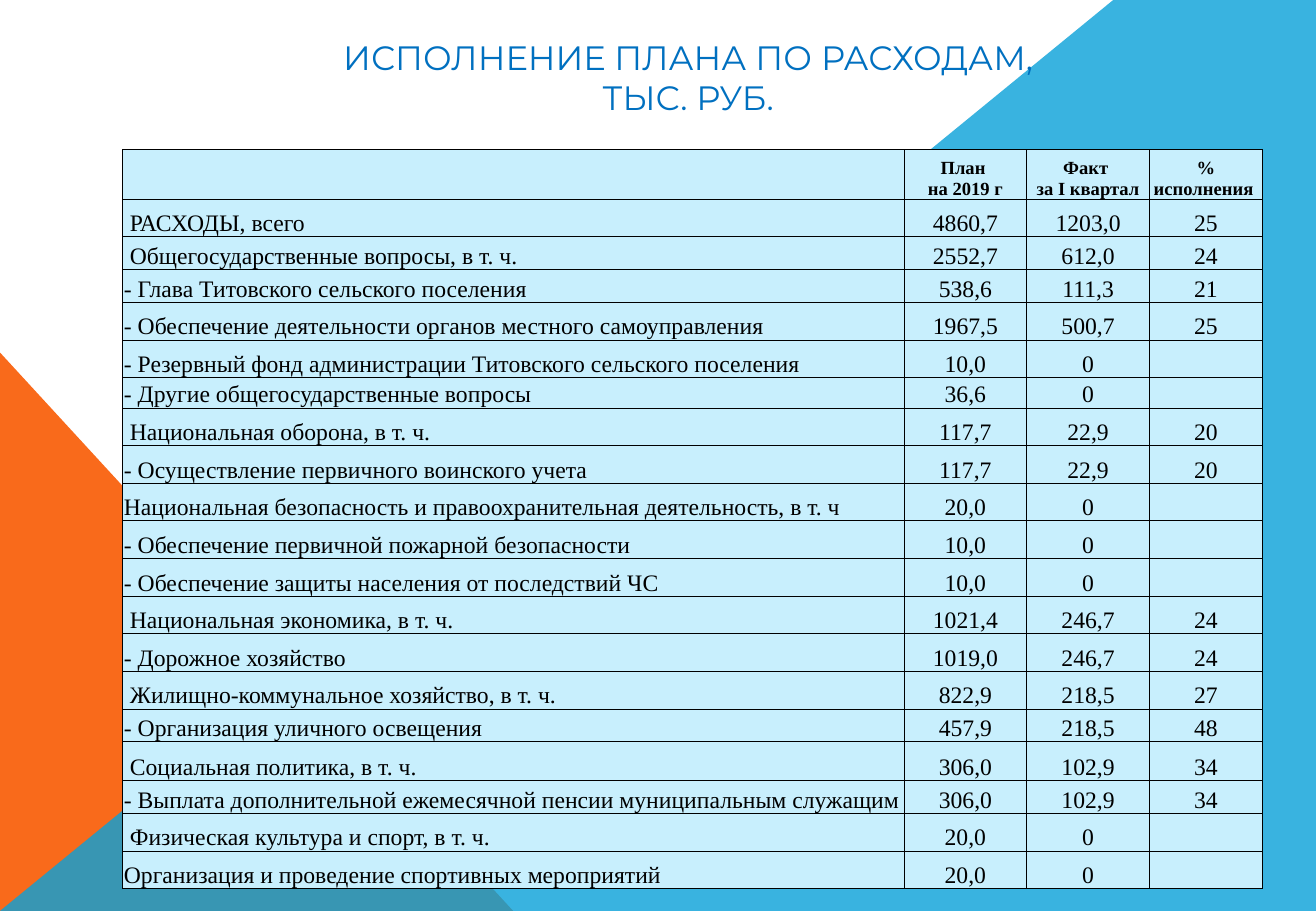
import pptx
import pptx.util
import pptx.dml.color
import pptx.enum.shapes
import pptx.enum.text
import pptx.oxml
import pptx.oxml.ns
from lxml import etree

PAGE_WIDTH, PAGE_HEIGHT = 10.83, 7.5
COLORS = {
    "orange": "F96A1B", "blue": "08A1D9", "title": "0070C0",
    "cell": "C8EFFD", "ink": "000000",
}
COLUMN_WIDTHS = [6.43, 1.01, 1.01, 0.93]
DEFAULT_ROW = 0.31
ROW_HEIGHTS = {0: 0.41, 2: 0.27, 3: 0.27, 6: 0.25, 15: 0.27, 16: 0.32, 17: 0.27}
HEADERS = ["", "План \nна 2019 г", "Факт \nза I квартал", "% исполнения "]
EXPENSES = [
    (" РАСХОДЫ, всего", "4860,7", "1203,0", "25"),
    (" Общегосударственные вопросы, в т. ч.", "2552,7", "612,0", "24"),
    ("- Глава Титовского сельского поселения", "538,6", "111,3", "21"),
    ("- Обеспечение деятельности органов местного самоуправления", "1967,5", "500,7", "25"),
    ("- Резервный фонд администрации Титовского сельского поселения", "10,0", "0", ""),
    ("- Другие общегосударственные вопросы", "36,6", "0", ""),
    (" Национальная оборона, в т. ч.", "117,7", "22,9", "20"),
    ("- Осуществление первичного воинского учета", "117,7", "22,9", "20"),
    ("Национальная безопасность и правоохранительная деятельность, в т. ч", "20,0", "0", ""),
    ("- Обеспечение первичной пожарной безопасности", "10,0", "0", ""),
    ("- Обеспечение защиты населения от последствий ЧС", "10,0", "0", ""),
    (" Национальная экономика, в т. ч.", "1021,4", "246,7", "24"),
    ("- Дорожное хозяйство", "1019,0", "246,7", "24"),
    (" Жилищно-коммунальное хозяйство, в т. ч.", "822,9", "218,5", "27"),
    ("- Организация уличного освещения", "457,9", "218,5", "48"),
    (" Социальная политика, в т. ч.", "306,0", "102,9", "34"),
    ("- Выплата дополнительной ежемесячной пенсии муниципальным служащим",
     "306,0", "102,9", "34"),
    (" Физическая культура и спорт, в т. ч.", "20,0", "0", ""),
    ("Организация и проведение спортивных мероприятий", "20,0", "0", ""),
]


def inches(*lengths):
    return [pptx.util.Inches(length) for length in lengths]


def paint(fill, color):
    fill.solid()
    fill.fore_color.rgb = pptx.dml.color.RGBColor.from_string(COLORS[color])


def style_paragraph(para, font_name, size, color, centered, bold=False):
    align = pptx.enum.text.PP_ALIGN
    para.alignment = align.CENTER if centered else align.LEFT
    para.font.name = font_name
    para.font.size = pptx.util.Pt(size)
    para.font.bold = bold
    para.font.color.rgb = pptx.dml.color.RGBColor.from_string(COLORS[color])


def add_background(page, box):
    left, top, width, height = box
    # Orange triangle in the lower left corner
    triangle = page.shapes.add_shape(
        pptx.enum.shapes.MSO_SHAPE.RIGHT_TRIANGLE,
        *inches(left, top + 0.387 * height, 0.39 * width, 0.613 * height))
    # Translucent blue area below the diagonal
    corners = [(0, 1), (0.846, 0), (1, 0), (1, 1)]
    points = [inches(left + x * width, top + y * height) for x, y in corners]
    builder = page.shapes.build_freeform(*points[0])
    builder.add_line_segments(points[1:], close=True)
    diagonal = builder.convert_to_shape()
    for shape, color in ((triangle, "orange"), (diagonal, "blue")):
        shape.shadow.inherit = False
        shape.line.fill.background()
        paint(shape.fill, color)
    tint = diagonal._element.spPr.find(".//" + pptx.oxml.ns.qn("a:srgbClr"))
    etree.SubElement(tint, pptx.oxml.ns.qn("a:alpha"), val="80000")


def add_title(page, box):
    frame = page.shapes.add_textbox(*inches(*box)).text_frame
    frame.word_wrap = True
    frame.vertical_anchor = pptx.enum.text.MSO_ANCHOR.MIDDLE
    frame.text = "ИСПОЛНЕНИЕ ПЛАНА ПО РАСХОДАМ, \nТЫС. РУБ. "
    for para in frame.paragraphs:
        style_paragraph(para, "Montserrat", 20, "title", centered=True)


def add_borders(cell):
    properties = cell._tc.get_or_add_tcPr()
    for position, side in enumerate(("lnL", "lnR", "lnT", "lnB")):
        properties.insert(position, pptx.oxml.parse_xml(
            f'<a:{side} {pptx.oxml.ns.nsdecls("a")} w="6350"><a:solidFill>'
            f'<a:srgbClr val="{COLORS["ink"]}"/></a:solidFill></a:{side}>'))


def fill_cell(cell, text, is_header, centered):
    cell.margin_left, cell.margin_right, cell.margin_top, cell.margin_bottom = inches(
        0.01, 0.01, 0.01, 0)
    cell.vertical_anchor = pptx.enum.text.MSO_ANCHOR.BOTTOM
    paint(cell.fill, "cell")
    add_borders(cell)
    cell.text_frame.text = text
    for para in cell.text_frame.paragraphs:
        style_paragraph(para, "Times New Roman", 11 if is_header else 14, "ink",
                        centered, bold=is_header)
        if not text:
            # Keeps an empty cell from stretching its row
            etree.SubElement(para._p, pptx.oxml.ns.qn("a:endParaRPr"), sz="1100")


def add_expense_table(page, box):
    rows = [HEADERS, *EXPENSES]
    table = page.shapes.add_table(len(rows), len(HEADERS), *inches(*box)).table
    table.first_row = table.horz_banding = False
    for column, width in zip(table.columns, COLUMN_WIDTHS):
        column.width = pptx.util.Inches(width)
    for row_index, values in enumerate(rows):
        table.rows[row_index].height = pptx.util.Inches(
            ROW_HEIGHTS.get(row_index, DEFAULT_ROW))
        for column_index, text in enumerate(values):
            fill_cell(table.cell(row_index, column_index), text,
                      is_header=row_index == 0, centered=column_index > 0)


def main():
    deck = pptx.Presentation()
    deck.slide_width, deck.slide_height = inches(PAGE_WIDTH, PAGE_HEIGHT)
    page = deck.slides.add_slide(deck.slide_layouts[6])
    content_left, content_width = 1.01, sum(COLUMN_WIDTHS)
    add_background(page, (0, 0, PAGE_WIDTH, PAGE_HEIGHT))
    add_expense_table(page, (content_left, 1.23, content_width, 6.07))
    add_title(page, (content_left, 0.25, content_width, 0.77))
    deck.save("out.pptx")


if __name__ == "__main__":
    main()
